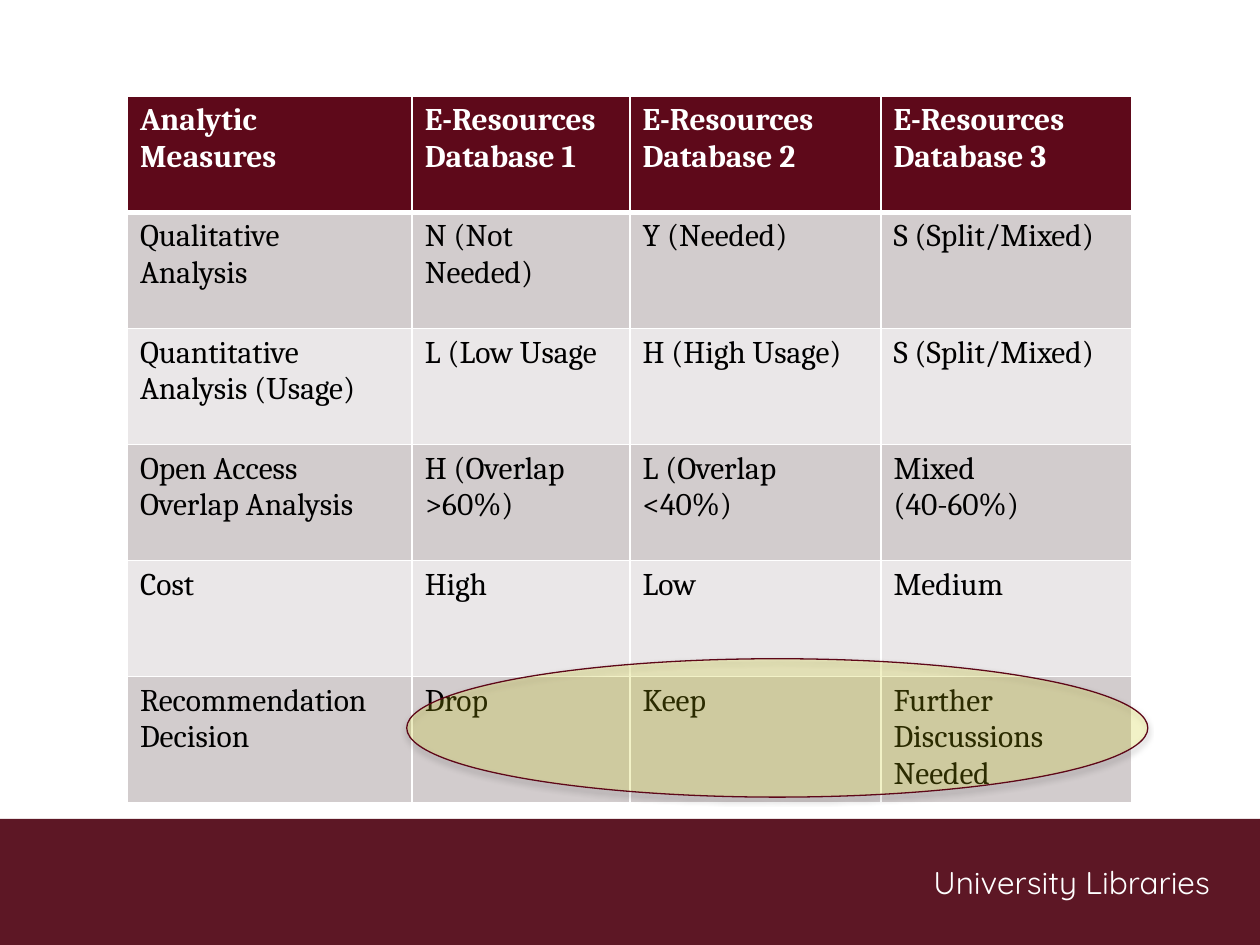
from lxml.etree import SubElement
from pptx import Presentation
from pptx.dml.color import RGBColor
from pptx.enum.shapes import MSO_SHAPE
from pptx.enum.text import PP_ALIGN
from pptx.oxml.ns import qn
from pptx.util import Cm, Pt

WHITE = RGBColor(0xFF, 0xFF, 0xFF)
BLACK = RGBColor(0x00, 0x00, 0x00)
FOOTER_MAROON = RGBColor(0x5D, 0x17, 0x25)
HEADER_MAROON = RGBColor(0x5E, 0x09, 0x1A)
OUTLINE_MAROON = RGBColor(0x5E, 0x07, 0x18)
DARK_BAND = RGBColor(0xD2, 0xCC, 0xCD)
LIGHT_BAND = RGBColor(0xEA, 0xE7, 0xE8)
YELLOW = RGBColor(0xFF, 0xFF, 0x00)

COLUMN_WIDTHS = [5.74, 4.39, 5.06, 5.06]
ROW_HEIGHT = 2.34

# A vertical tab is a line break within a paragraph
ROWS = [
    ["Analytic\vMeasures", "E-Resources\vDatabase 1",
     "E-Resources\vDatabase 2", "E-Resources\vDatabase 3"],
    ["Qualitative\vAnalysis", "N (Not Needed)", "Y (Needed)", "S (Split/Mixed)"],
    ["Quantitative\vAnalysis (Usage)", "L (Low Usage", "H (High Usage)",
     "S (Split/Mixed)"],
    ["Open Access Overlap Analysis", "H (Overlap >60%)", "L (Overlap <40%)",
     "Mixed\v(40-60%)"],
    ["Cost", "High", "Low", "Medium"],
    ["Recommendation Decision", "Drop", "Keep", "Further Discussions Needed"],
]


def format_text(text_frame, font_name, color, bold=False):
    for paragraph in text_frame.paragraphs:
        for run in paragraph.runs:
            run.font.name = font_name
            run.font.size = Pt(18)
            run.font.bold = bold
            run.font.color.rgb = color


def add_color(parent, color, opacity=None):
    element = SubElement(parent, qn("a:srgbClr"), val=str(color))
    if opacity is not None:
        SubElement(element, qn("a:alpha"), val=str(opacity * 1000))


def set_borders(cell, row_index):
    properties = cell._tc.get_or_add_tcPr()
    widths = {
        "lnL": 1,
        "lnR": 1,
        "lnT": 3 if row_index == 1 else 1,
        "lnB": 3 if row_index == 0 else 1,
    }
    for side, width in widths.items():
        line = SubElement(properties, qn(f"a:{side}"), w=str(Pt(width)))
        add_color(SubElement(line, qn("a:solidFill")), WHITE)


def add_footer(slide):
    band = slide.shapes.add_shape(
        MSO_SHAPE.RECTANGLE, Cm(0), Cm(16.51), Cm(25.4), Cm(2.54))
    band.shadow.inherit = False
    band.fill.solid()
    band.fill.fore_color.rgb = FOOTER_MAROON
    band.line.fill.background()

    label = slide.shapes.add_textbox(Cm(15.01), Cm(17.27), Cm(9.63), Cm(1.02))
    text_frame = label.text_frame
    text_frame.word_wrap = True
    text_frame.text = "University Libraries"
    text_frame.paragraphs[0].alignment = PP_ALIGN.RIGHT
    format_text(text_frame, "Quicksand", WHITE)


def add_measures_table(slide):
    table = slide.shapes.add_table(
        len(ROWS), len(COLUMN_WIDTHS), Cm(2.57), Cm(1.94),
        Cm(sum(COLUMN_WIDTHS)), Cm(ROW_HEIGHT * len(ROWS))).table
    for column, width in zip(table.columns, COLUMN_WIDTHS):
        column.width = Cm(width)
    for row_index, texts in enumerate(ROWS):
        table.rows[row_index].height = Cm(ROW_HEIGHT)
        is_header = row_index == 0
        band_color = DARK_BAND if row_index % 2 else LIGHT_BAND
        for cell, text in zip(table.rows[row_index].cells, texts):
            cell.text_frame.text = text
            format_text(cell.text_frame, "Cambria",
                        WHITE if is_header else BLACK, is_header)
            set_borders(cell, row_index)
            cell.fill.solid()
            cell.fill.fore_color.rgb = HEADER_MAROON if is_header else band_color


def add_highlight(slide):
    ellipse = slide.shapes.add_shape(
        MSO_SHAPE.OVAL, Cm(8.2), Cm(13.28), Cm(14.94), Cm(2.79))
    ellipse.shadow.inherit = False
    ellipse.fill.solid()
    ellipse.fill.fore_color.rgb = YELLOW
    ellipse.line.color.rgb = OUTLINE_MAROON
    ellipse.line.width = Pt(0.75)

    # Translucent fill and soft shadow below
    properties = ellipse._element.spPr
    fill_color = properties.find(qn("a:solidFill")).find(qn("a:srgbClr"))
    SubElement(fill_color, qn("a:alpha"), val="17000")
    shadow = SubElement(
        properties.find(qn("a:effectLst")), qn("a:outerShdw"),
        blurRad=str(Pt(3.1)), dist=str(Pt(1.8)), dir="5400000", rotWithShape="0")
    add_color(shadow, BLACK, 35)


def main():
    presentation = Presentation()
    presentation.slide_width = Cm(25.4)
    presentation.slide_height = Cm(19.05)
    slide = presentation.slides.add_slide(presentation.slide_layouts[6])
    add_footer(slide)
    add_measures_table(slide)
    add_highlight(slide)
    presentation.save("out.pptx")


if __name__ == "__main__":
    main()
